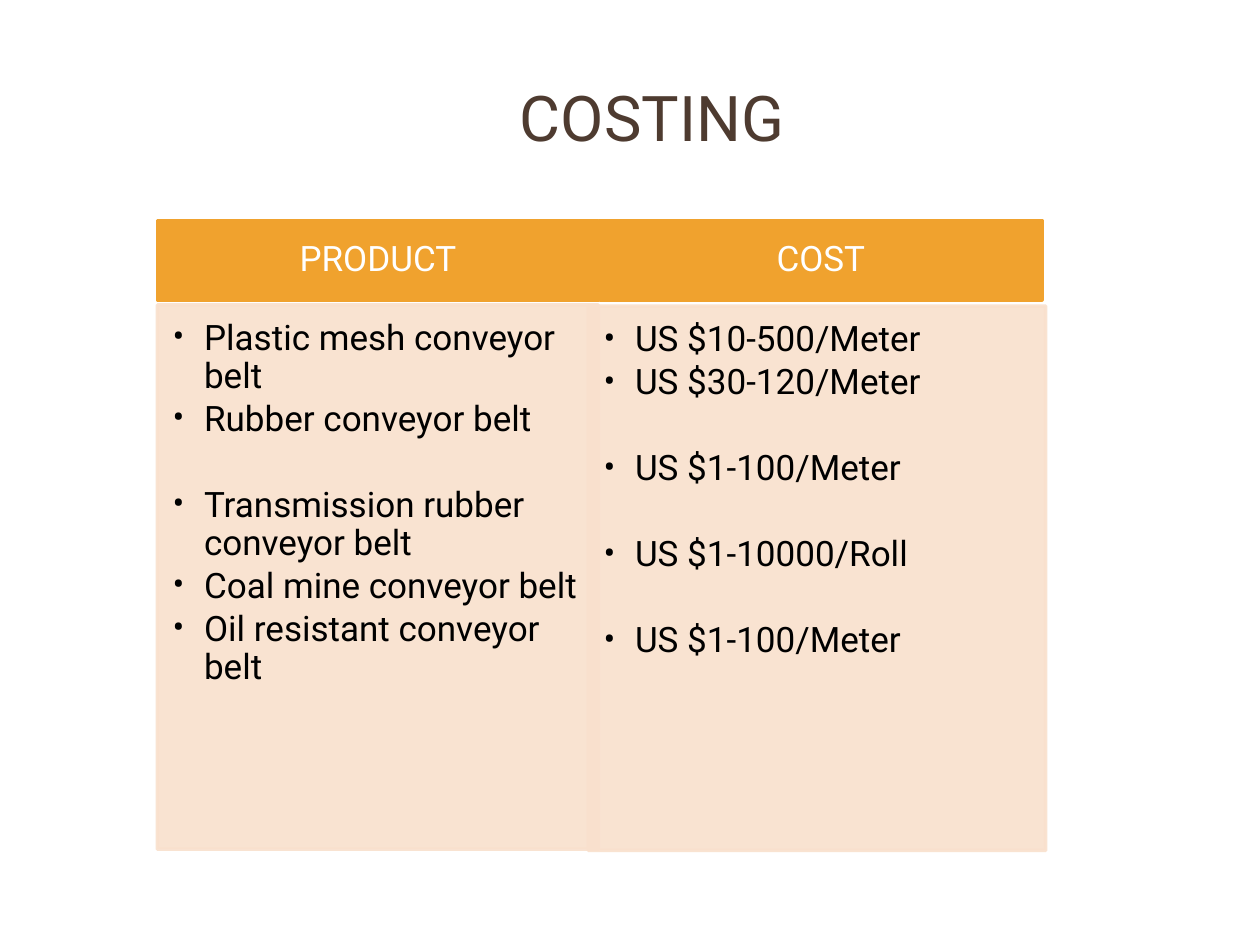
"""Build a costing slide that lists conveyor belt products beside their prices."""
from lxml import etree
from pptx import Presentation
from pptx.dml.color import RGBColor
from pptx.enum.shapes import MSO_SHAPE
from pptx.enum.text import MSO_ANCHOR, PP_ALIGN
from pptx.oxml.ns import qn
from pptx.util import Inches, Pt

RECTANGLE = MSO_SHAPE.RECTANGLE
TOP, MIDDLE = MSO_ANCHOR.TOP, MSO_ANCHOR.MIDDLE
LEFT, CENTER = PP_ALIGN.LEFT, PP_ALIGN.CENTER
BROWN = RGBColor(0x4E, 0x3B, 0x30)
ORANGE = RGBColor(0xF0, 0xA2, 0x2E)
PEACH = RGBColor(0xF9, 0xE0, 0xCD)
WHITE = RGBColor(0xFF, 0xFF, 0xFF)
BLACK = RGBColor(0x00, 0x00, 0x00)
FONT = "Roboto"
ITEM_GAP = Pt(3)
WIDE_GAP = Pt(24.6)


def add_panel(slide, box, color, margins, anchor):
    """Add a filled rectangle and return it with its text area set up."""
    shape = slide.shapes.add_shape(RECTANGLE, *[Inches(length) for length in box])
    shape.shadow.inherit = False
    shape.fill.solid()
    shape.fill.fore_color.rgb = color
    shape.line.color.rgb = color
    shape.line.width = Pt(2)
    frame = shape.text_frame
    frame.word_wrap = True
    frame.vertical_anchor = anchor
    frame.margin_left, frame.margin_top, frame.margin_right, frame.margin_bottom = [
        Inches(margin) for margin in margins
    ]
    return shape


def format_paragraph(paragraph, text, size, color, alignment):
    """Write the text of a paragraph and set its font."""
    paragraph.text = text
    paragraph.alignment = alignment
    paragraph.font.name = FONT
    paragraph.font.size = Pt(size)
    paragraph.font.color.rgb = color


presentation = Presentation()
presentation.slide_width = Inches(10)
presentation.slide_height = Inches(7.5)
slide = presentation.slides.add_slide(presentation.slide_layouts[5])

title = slide.shapes.title
title.left, title.top = Inches(0.58), Inches(0.3)
title.width, title.height = Inches(9.19), Inches(1.25)
title.text_frame.vertical_anchor = MIDDLE
format_paragraph(title.text_frame.paragraphs[0], "COSTING", 36, BROWN, CENTER)

columns = [
    ("PRODUCT", (1.25, 1.75, 3.5, 0.63), (1.25, 2.42, 3.5, 4.32), [
        ("Plastic mesh conveyor belt", 0),
        ("Rubber conveyor belt", 0),
        ("Transmission rubber conveyor belt", WIDE_GAP),
        ("Coal mine conveyor belt", 0),
        ("Oil resistant conveyor belt", 0),
    ]),
    ("COST", (4.76, 1.75, 3.51, 0.63), (4.67, 2.43, 3.63, 4.32), [
        ("US $10-500/Meter", 0),
        ("US $30-120/Meter", 0),
        ("US $1-100/Meter", WIDE_GAP),
        ("US $1-10000/Roll", WIDE_GAP),
        ("US $1-100/Meter", WIDE_GAP),
    ]),
]

for heading, heading_box, list_box, items in columns:
    header = add_panel(slide, heading_box, ORANGE, (0.16, 0.09, 0.16, 0.09), MIDDLE)
    paragraph = header.text_frame.paragraphs[0]
    paragraph.line_spacing = 0.9
    format_paragraph(paragraph, heading, 20, WHITE, CENTER)

    panel = add_panel(slide, list_box, PEACH, (0.12, 0.12, 0.16, 0.17), TOP)
    for color_element in panel._element.spPr.iter(qn("a:srgbClr")):
        etree.SubElement(color_element, qn("a:alpha"), val="90000")

    frame = panel.text_frame
    for index, (item, space_before) in enumerate(items):
        paragraph = frame.add_paragraph() if index else frame.paragraphs[0]
        properties = paragraph._p.get_or_add_pPr()
        properties.set("marL", str(Inches(0.25)))
        properties.set("indent", str(Inches(-0.25)))
        etree.SubElement(properties, qn("a:buFont"), typeface=FONT)
        etree.SubElement(properties, qn("a:buChar"), char="•")
        paragraph.line_spacing = 0.9
        paragraph.space_before = space_before
        paragraph.space_after = ITEM_GAP
        format_paragraph(paragraph, item, 20, BLACK, LEFT)

presentation.save("out.pptx")
